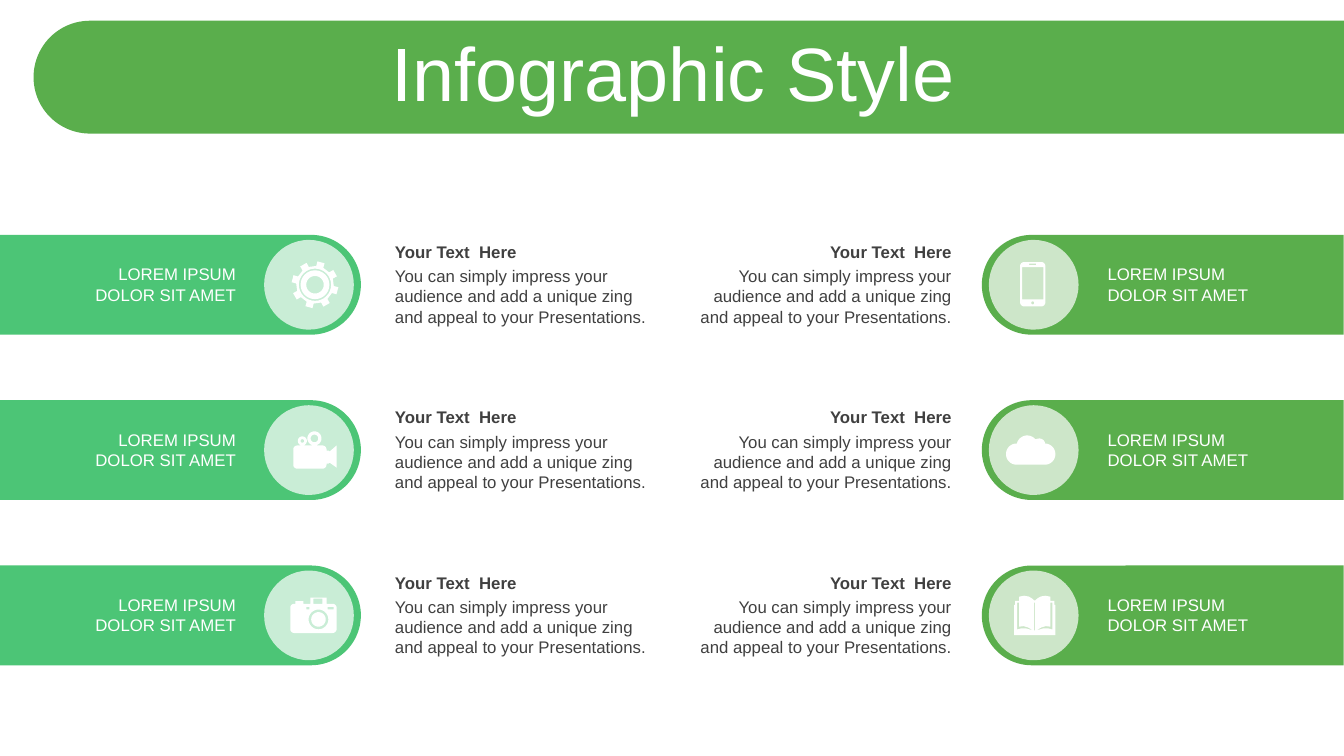
import math

import pptx
import pptx.dml.color
import pptx.enum.shapes
import pptx.enum.text
import pptx.oxml
import pptx.oxml.ns
import pptx.util

CELL = pptx.util.Inches(0.1)
COLS, ROWS = 133.33, 75
FIRST_ROW, ROW_STEP = 28.25, 16.4
GREEN, MINT, WHITE, GREY = "5AAE4C", "4CC576", "FFFFFF", "404040"
SHAPES = pptx.enum.shapes.MSO_SHAPE
ALIGN = pptx.enum.text.PP_ALIGN
ANCHOR = pptx.enum.text.MSO_ANCHOR
HEADING = "Your Text  Here"
BODY = "You can simply impress your audience and add a unique zing and appeal to your Presentations."
LABEL = ["LOREM IPSUM", "DOLOR SIT AMET"]


def cells(*values):
    return [round(v * CELL) for v in values]


def rgb(color):
    return pptx.dml.color.RGBColor.from_string(color)


def apply(obj, values):
    for name, value in values.items():
        setattr(obj, name, value)


def paint(sp, color, opacity=100):
    sp.shadow.inherit = False
    sp.fill.solid()
    sp.fill.fore_color.rgb = rgb(color)
    sp.line.fill.background()
    if opacity < 100:
        clr = sp.fill._xPr.find(".//" + pptx.oxml.ns.qn("a:srgbClr"))
        alpha = pptx.oxml.parse_xml(
            f'<a:alpha {pptx.oxml.ns.nsdecls("a")} val="{opacity * 1000}"/>')
        clr.append(alpha)


def add_bar(s, left, cy, length, thick, rotation, color):
    cx = left + length / 2
    box = cells(cx - thick / 2, cy - length / 2, thick, length)
    sp = s.shapes.add_shape(SHAPES.ROUND_2_SAME_RECTANGLE, *box)
    sp.adjustments[0], sp.adjustments[1] = 0.5, 0
    sp.rotation = rotation
    paint(sp, color)


def add_disc(s, cx, cy, size):
    box = cells(cx - size / 2, cy - size / 2, size, size)
    paint(s.shapes.add_shape(SHAPES.OVAL, *box), WHITE, 70)


def add_text(s, box, lines, color, size=12, bold=False, align=ALIGN.LEFT,
             anchor=ANCHOR.TOP, spacing=None):
    tf = s.shapes.add_textbox(*cells(*box)).text_frame
    apply(tf, {"word_wrap": True, "vertical_anchor": anchor})
    for i, line in enumerate(lines):
        p = tf.add_paragraph() if i else tf.paragraphs[0]
        apply(p, {"alignment": align, **(spacing or {})})
        r = p.add_run()
        r.text = line
        apply(r.font, {"name": "Arial", "size": pptx.util.Pt(size), "bold": bold})
        r.font.color.rgb = rgb(color)


def arc(cx, cy, radius, start=0, end=360, steps=32):
    angles = [math.radians(start + (end - start) * i / steps) for i in range(steps + 1)]
    return [(cx + radius * math.cos(a), cy + radius * math.sin(a)) for a in angles]


def rect(x1, y1, x2, y2, radius=0):
    if not radius:
        return [(x1, y1), (x2, y1), (x2, y2), (x1, y2)]
    corners = [(x2 - radius, y2 - radius), (x1 + radius, y2 - radius),
               (x1 + radius, y1 + radius), (x2 - radius, y1 + radius)]
    return [pt for i, (x, y) in enumerate(corners)
            for pt in arc(x, y, radius, 90 * i, 90 * i + 90, 8)]


def gear():
    cx, cy, teeth = 0.6, 0, []
    for k in range(8):
        for radius, offset in [(1.87, -11), (2.33, -9), (2.33, 9), (1.87, 11)]:
            a = math.radians(45 * k - 30 + offset)
            teeth.append((cx + radius * math.cos(a), cy + radius * math.sin(a)))
    return [teeth] + [arc(cx, cy, radius) for radius in (1.6, 1.43, 0.87)]


def movie_camera():
    horn = [(1.75, 0.05), (1.95, 0.05), (2.05, 0.15), (2.75, -0.45),
            (2.75, 1.75), (2.05, 1.25), (1.95, 1.35), (1.75, 1.35)]
    reels = [arc(0.55, -1.15, r) for r in (0.7, 0.38)]
    reels += [arc(-0.65, -0.9, r) for r in (0.45, 0.18)]
    return [rect(-1.55, -0.45, 1.75, 1.85, 0.4), horn] + reels


def photo_camera():
    return [rect(-1.85, -1.15, 2.75, 1.75, 0.4), rect(-1.35, -1.4, -0.55, -1.15),
            rect(0.15, -1.75, 1.75, -1.15), rect(0.45, -1.65, 1.35, -1.15),
            rect(-0.25, -0.85, 0.05, -0.6), rect(1.85, -0.85, 2.45, -0.6),
            arc(0.95, 0.4, 0.98), arc(0.95, 0.4, 0.72)]


def phone():
    return [rect(-1.35, -2.25, 1.15, 2.15, 0.4), rect(-1.15, -1.75, 0.95, 1.45),
            rect(-0.45, -2.08, 0.25, -1.95), arc(-0.1, 1.8, 0.15)]


def cloud():
    return [arc(-1.7, 0.4, 1.05, 90, 270) + arc(-0.65, -0.4, 1.05, 190, 320)
            + arc(0.55, -0.55, 0.6, 250, 360) + arc(1.1, 0.4, 1.05, 270, 450)]


def book():
    spine = 0.1
    cover = [(0, -1.45), (0.3, -1.7), (0.6, -1.87), (1.05, -1.95), (1.55, -1.85),
             (1.55, -1.45), (1.95, -1.45), (1.95, -1.05), (2.05, -1.05), (2.05, 1.95)]
    page = [(1.55, -1.25), (1.75, -1.25), (1.75, 1.4), (1.3, 1.28), (0.9, 1.28),
            (0.15, 1.5), (0.65, 1.2), (1.1, 1.07), (1.55, 1.12)]
    outline = cover + [(-x, y) for x, y in reversed(cover)]
    pages = [[(side * x, y) for x, y in page] for side in (-1, 1)]
    slit = rect(-0.05, -1.25, 0.05, 1.5)
    return [[(spine + x, y) for x, y in c] for c in [outline, *pages, slit]]


def add_icon(s, cx, cy, contours):
    placed = [[cells(cx + x, cy + y) for x, y in c] for c in contours]
    builder = s.shapes.build_freeform(*placed[0][0])
    for i, points in enumerate(placed):
        if i:
            builder.move_to(*points[0])
        builder.add_line_segments(points[1:], close=True)
    paint(builder.convert_to_shape(), WHITE)


def add_item(s, cy, side, contours):
    add_bar(s, side["bar"], cy, 35.9, 9.9, side["rotation"], side["color"])
    add_disc(s, side["disc"], cy, 8.9)
    add_icon(s, side["disc"], cy, contours)
    add_text(s, (side["text"], cy - 2.35, 28.4, 7.1), [BODY], GREY, align=side["align"])
    add_text(s, (side["text"], cy - 4.75, 28.4, 3), [HEADING], GREY,
             bold=True, align=side["align"])
    add_text(s, (side["label"], cy - 2.55, 20.3, 5), LABEL, WHITE,
             align=side["label_align"], anchor=ANCHOR.MIDDLE)


def main():
    prs = pptx.Presentation()
    prs.slide_width, prs.slide_height = cells(COLS, ROWS)
    s = prs.slides.add_slide(prs.slide_layouts[6])
    add_bar(s, 3.33, 7.65, 130, 11.2, 270, GREEN)
    add_text(s, (3.5, 3.7, 126.6, 7.9), ["Infographic Style"], WHITE, size=54,
             align=ALIGN.CENTER, anchor=ANCHOR.MIDDLE,
             spacing={"line_spacing": 0.9, "space_before": pptx.util.Pt(10)})
    left = {"bar": -0.1, "rotation": 90, "color": MINT, "disc": 30.65, "text": 38.2,
            "align": ALIGN.LEFT, "label": 4.1, "label_align": ALIGN.RIGHT}
    right = {"bar": 97.4, "rotation": 270, "color": GREEN, "disc": 102.55, "text": 67,
             "align": ALIGN.RIGHT, "label": 108.9, "label_align": ALIGN.LEFT}
    icons = [(gear, phone), (movie_camera, cloud), (photo_camera, book)]
    for i, pair in enumerate(icons):
        for side, icon in zip((left, right), pair):
            add_item(s, FIRST_ROW + ROW_STEP * i, side, icon())
    prs.save("out.pptx")


if __name__ == "__main__":
    main()
